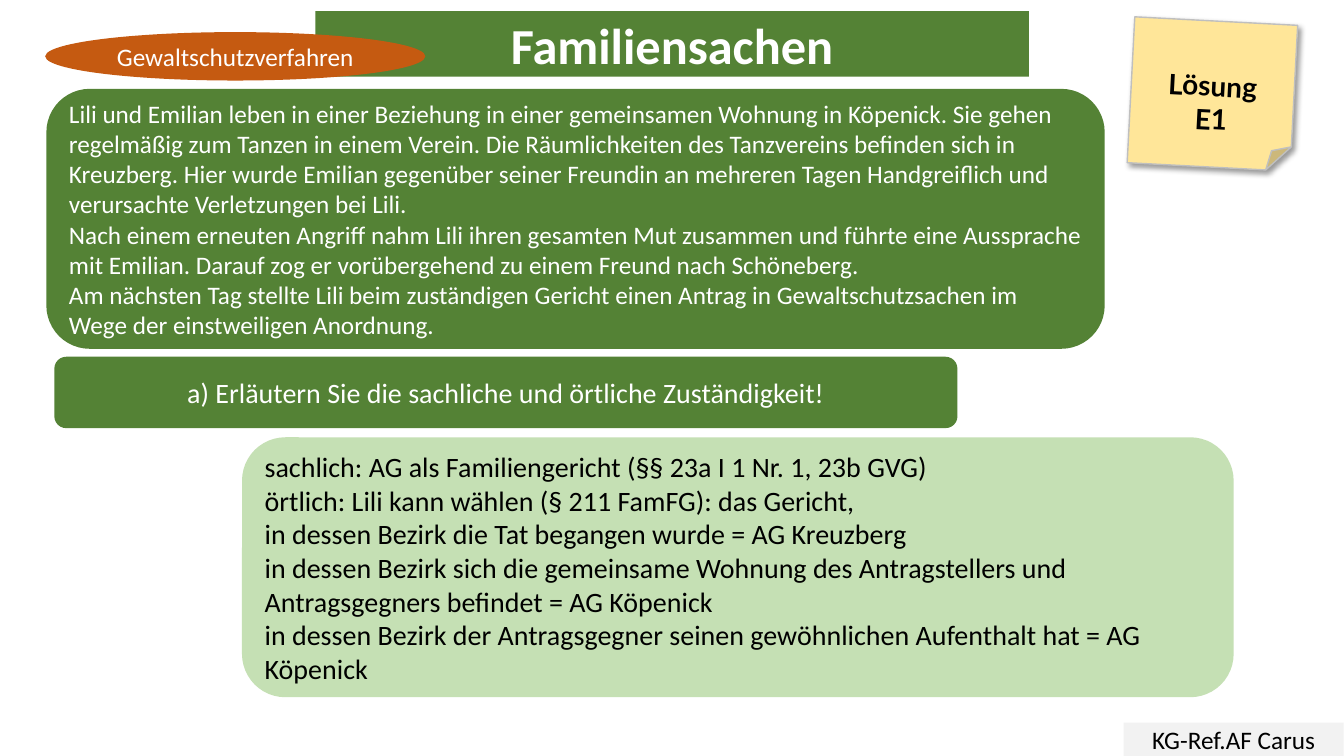
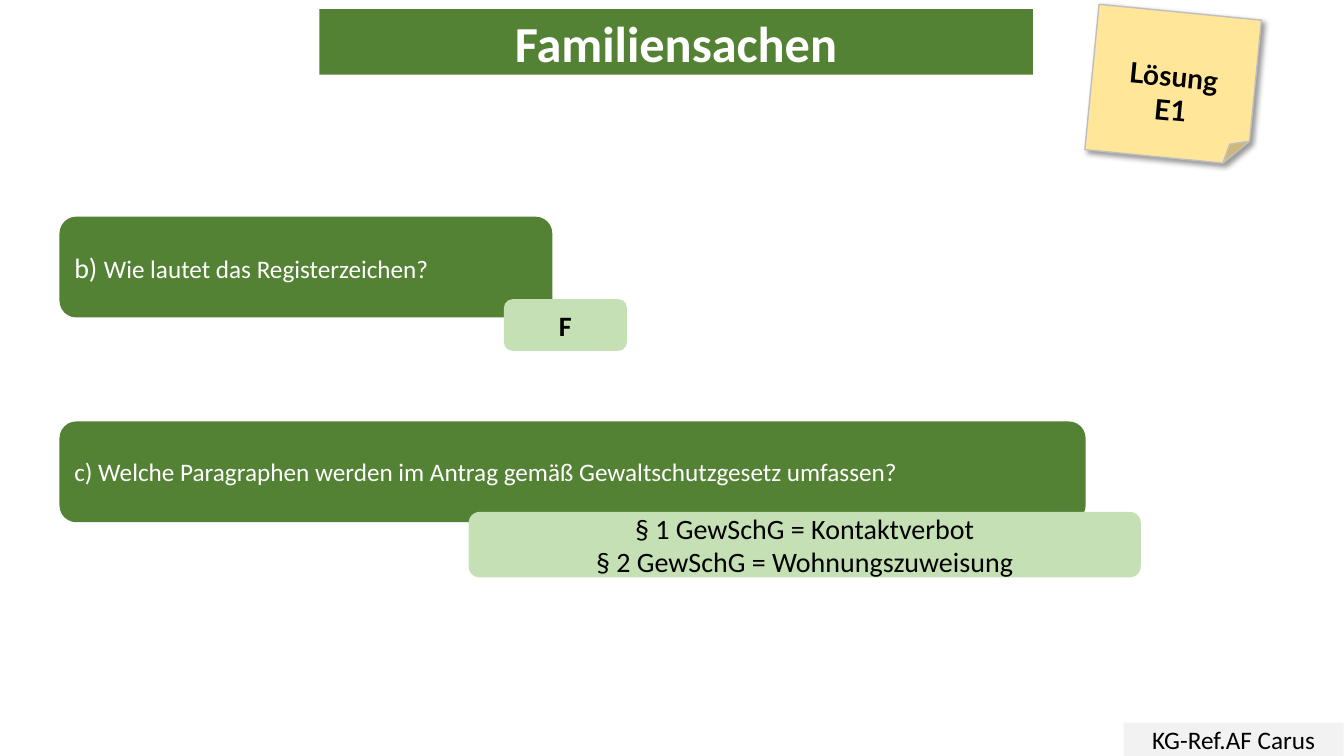
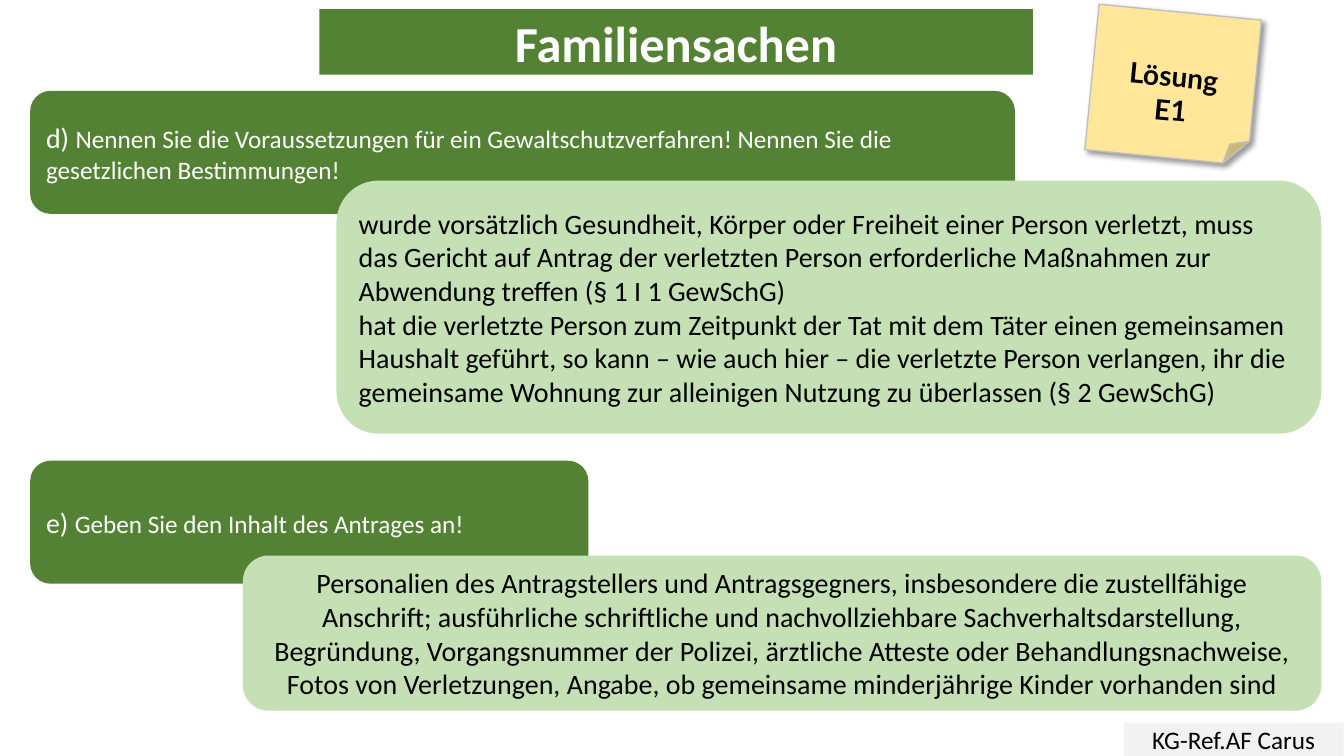
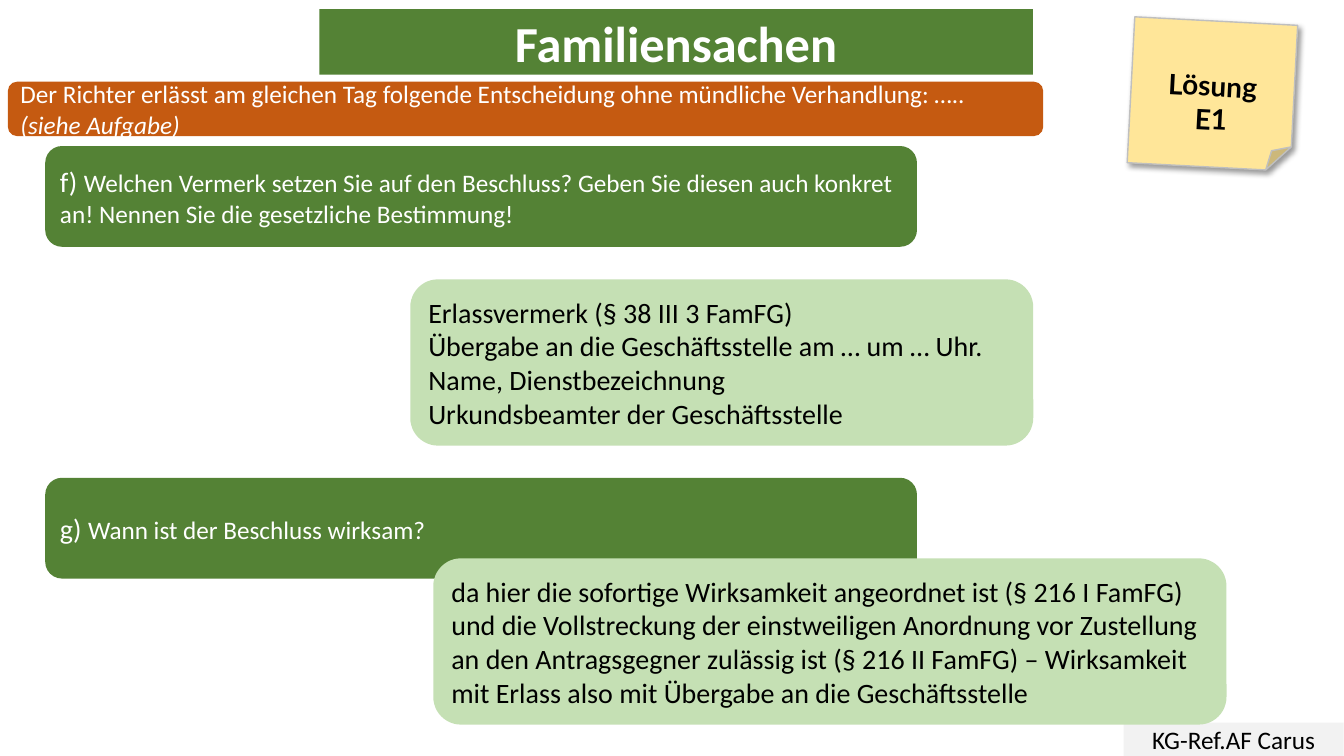
"""Builds four solution slides on a family law case in out.pptx."""
from dataclasses import dataclass

from lxml import etree
from pptx import Presentation
from pptx.dml.color import RGBColor
from pptx.enum.shapes import MSO_SHAPE
from pptx.enum.text import MSO_ANCHOR, MSO_AUTO_SIZE, PP_ALIGN
from pptx.oxml.ns import qn
from pptx.util import Cm, Pt

ROUNDED = MSO_SHAPE.ROUNDED_RECTANGLE
RECTANGLE = MSO_SHAPE.RECTANGLE
ELLIPSE = MSO_SHAPE.OVAL
NOTE = MSO_SHAPE.FOLDED_CORNER
LEFT = PP_ALIGN.LEFT
CENTER = PP_ALIGN.CENTER
MIDDLE = MSO_ANCHOR.MIDDLE
NO_AUTOFIT = MSO_AUTO_SIZE.NONE
TITLE_ONLY = 5


@dataclass(frozen=True)
class Theme:
    """Colours, fonts and type sizes."""
    dark_green: str = "548235"
    light_green: str = "C5E0B4"
    orange: str = "C55A11"
    yellow: str = "FFE699"
    pale_gray: str = "F2F2F2"
    gray: str = "BFBFBF"
    white: str = "FFFFFF"
    black: str = "000000"
    font: str = "Calibri"
    note_font: str = "Lato"
    title_size: int = 36
    large_size: int = 20
    small_size: int = 18


@dataclass(frozen=True)
class Style:
    """Look of a box; sizes has one entry for each run of a paragraph."""
    fill: str
    color: str
    sizes: tuple
    align: int = LEFT
    bold: bool = False
    italic_tail: bool = False
    font: str = Theme.font
    geometry: int = ROUNDED


theme = Theme()
large, small = theme.large_size, theme.small_size

title_style = Style(theme.dark_green, theme.white, (theme.title_size,), CENTER, bold=True)
footer_style = Style(theme.pale_gray, theme.black, (small,), CENTER, geometry=RECTANGLE)
note_style = Style(theme.yellow, theme.black, (large,), CENTER, bold=True,
                   font=theme.note_font, geometry=NOTE)
case_style = Style(theme.dark_green, theme.white, (small,))
question_style = Style(theme.dark_green, theme.white, (large, small))
centered_question_style = Style(theme.dark_green, theme.white, (large,), CENTER)
answer_style = Style(theme.light_green, theme.black, (large,))
centered_answer_style = Style(theme.light_green, theme.black, (large,), CENTER)
bold_answer_style = Style(theme.light_green, theme.black, (large,), CENTER, bold=True)
decision_style = Style(theme.orange, theme.white, (small, small), italic_tail=True)
topic_style = Style(theme.orange, theme.white, (small,), CENTER, geometry=ELLIPSE)

TITLE_SIZE = (17.98, 1.65)
NOTE_SIZE = (4.11, 3.68)
FOOTER_BOX = (28.32, 18.21, 5.54, 0.84)
STRAIGHT_NOTE = (28.5, 0.53, 3)
TILTED_NOTE = (27.51, 0.3, 5.6)
FIRST_TITLE = (7.95, 0.28)
NEXT_TITLE = (8.05, 0.23)


def format_box(shape, style, paragraphs):
    """Fill a shape and set its text, with | between runs."""
    shape.fill.solid()
    shape.fill.fore_color.rgb = RGBColor.from_string(style.fill)
    shape.line.fill.background()
    frame = shape.text_frame
    frame.word_wrap = True
    frame.auto_size = NO_AUTOFIT
    frame.vertical_anchor = MIDDLE
    for index, text in enumerate(paragraphs):
        paragraph = frame.add_paragraph() if index else frame.paragraphs[0]
        paragraph.alignment = style.align
        for position, (part, size) in enumerate(zip(text.split("|"), style.sizes)):
            run = paragraph.add_run()
            run.text = part
            run.font.name = style.font
            run.font.size = Pt(size)
            run.font.bold = style.bold
            run.font.italic = style.italic_tail and position > 0
            run.font.color.rgb = RGBColor.from_string(style.color)


def add_box(slide, style, box, paragraphs):
    """Add a shape without shadow, with its box given in centimetres."""
    shape = slide.shapes.add_shape(style.geometry, *(Cm(length) for length in box))
    shape.shadow.inherit = False
    format_box(shape, style, paragraphs)
    return shape


slides = [
    (FIRST_TITLE, STRAIGHT_NOTE, [
        (case_style, (1.17, 2.24, 26.67, 6.55), [
            "Lili und Emilian leben in einer Beziehung in einer gemeinsamen Wohnung in "
            "Köpenick. Sie gehen regelmäßig zum Tanzen in einem Verein. Die "
            "Räumlichkeiten des Tanzvereins befinden sich in Kreuzberg. Hier wurde "
            "Emilian gegenüber seiner Freundin an mehreren Tagen Handgreiflich und "
            "verursachte Verletzungen bei Lili.",
            "Nach einem erneuten Angriff nahm Lili ihren gesamten Mut zusammen und "
            "führte eine Aussprache mit Emilian. Darauf zog er vorübergehend zu einem "
            "Freund nach Schöneberg.",
            "Am nächsten Tag stellte Lili beim zuständigen Gericht einen Antrag in "
            "Gewaltschutzsachen im Wege der einstweiligen Anordnung.",
        ]),
        (centered_question_style, (1.37, 8.99, 22.76, 1.8), [
            "a) Erläutern Sie die sachliche und örtliche Zuständigkeit!",
        ]),
        (answer_style, (6.1, 11.02, 24.99, 6.55), [
            "sachlich: AG als Familiengericht (§§ 23a I 1 Nr. 1, 23b GVG)",
            "örtlich: Lili kann wählen (§ 211 FamFG): das Gericht,",
            "in dessen Bezirk die Tat begangen wurde = AG Kreuzberg",
            "in dessen Bezirk sich die gemeinsame Wohnung des Antragstellers und "
            "Antragsgegners befindet = AG Köpenick",
            "in dessen Bezirk der Antragsgegner seinen gewöhnlichen Aufenthalt hat = AG "
            "Köpenick",
        ]),
        (topic_style, (1.14, 0.81, 9.58, 1.22), ["Gewaltschutzverfahren"]),
    ]),
    (NEXT_TITLE, TILTED_NOTE, [
        (question_style, (1.5, 5.46, 12.42, 2.54), ["b) |Wie lautet das Registerzeichen?"]),
        (bold_answer_style, (12.7, 7.54, 3.1, 1.3), ["F"]),
        (case_style, (1.5, 10.62, 25.86, 2.54), [
            "c) Welche Paragraphen werden im Antrag gemäß Gewaltschutzgesetz umfassen?",
        ]),
        (centered_answer_style, (11.81, 12.9, 16.94, 1.65), [
            "§ 1 GewSchG = Kontaktverbot",
            "§ 2 GewSchG = Wohnungszuweisung",
        ]),
    ]),
    (NEXT_TITLE, TILTED_NOTE, [
        (question_style, (0.76, 2.29, 24.82, 3.1), [
            "d) |Nennen Sie die Voraussetzungen für ein Gewaltschutzverfahren! Nennen Sie "
            "die gesetzlichen Bestimmungen!",
        ]),
        (answer_style, (8.48, 4.55, 24.82, 6.38), [
            "wurde vorsätzlich Gesundheit, Körper oder Freiheit einer Person verletzt, "
            "muss das Gericht auf Antrag der verletzten Person erforderliche Maßnahmen "
            "zur Abwendung treffen (§ 1 I 1 GewSchG)",
            "hat die verletzte Person zum Zeitpunkt der Tat mit dem Täter einen "
            "gemeinsamen Haushalt geführt, so kann – wie auch hier – die verletzte "
            "Person verlangen, ihr die gemeinsame Wohnung zur alleinigen Nutzung zu "
            "überlassen (§ 2 GewSchG)",
        ]),
        (question_style, (0.76, 11.61, 14.07, 3.1), [
            "e) |Geben Sie den Inhalt des Antrages an!",
        ]),
        (centered_answer_style, (6.12, 14, 27.18, 3.91), [
            "Personalien des Antragstellers und Antragsgegners, insbesondere die "
            "zustellfähige Anschrift; ausführliche schriftliche und nachvollziehbare "
            "Sachverhaltsdarstellung, Begründung, Vorgangsnummer der Polizei, ärztliche "
            "Atteste oder Behandlungsnachweise, Fotos von Verletzungen, Angabe, ob "
            "gemeinsame minderjährige Kinder vorhanden sind",
        ]),
    ]),
    (NEXT_TITLE, STRAIGHT_NOTE, [
        (question_style, (1.14, 3.68, 21.97, 2.54), [
            "f) |Welchen Vermerk setzen Sie auf den Beschluss? Geben Sie diesen auch "
            "konkret an! Nennen Sie die gesetzliche Bestimmung!",
        ]),
        (answer_style, (10.34, 7.04, 15.7, 4.19), [
            "Erlassvermerk (§ 38 III 3 FamFG)",
            "Übergabe an die Geschäftsstelle am … um … Uhr.",
            "Name, Dienstbezeichnung",
            "Urkundsbeamter der Geschäftsstelle",
        ]),
        (decision_style, (0.2, 2.06, 26.09, 1.37), [
            "Der Richter erlässt am gleichen Tag folgende Entscheidung ohne mündliche "
            "Verhandlung: ….. |(siehe Aufgabe)",
        ]),
        (question_style, (1.14, 12.04, 21.97, 2.54), ["g) |Wann ist der Beschluss wirksam?"]),
        (answer_style, (10.92, 14.07, 19.99, 4.19), [
            "da hier die sofortige Wirksamkeit angeordnet ist (§ 216 I FamFG) und die "
            "Vollstreckung der einstweiligen Anordnung vor Zustellung an den "
            "Antragsgegner zulässig ist (§ 216 II FamFG) – Wirksamkeit mit Erlass also "
            "mit Übergabe an die Geschäftsstelle",
        ]),
    ]),
]

presentation = Presentation()
presentation.slide_width = Cm(33.87)
presentation.slide_height = Cm(19.05)

for title_position, (note_left, note_top, note_rotation), boxes in slides:
    slide = presentation.slides.add_slide(presentation.slide_layouts[TITLE_ONLY])

    title = slide.shapes.title
    title.left, title.top = (Cm(length) for length in title_position)
    title.width, title.height = (Cm(length) for length in TITLE_SIZE)
    geometry = etree.SubElement(title.element.spPr, qn("a:prstGeom"), prst="roundRect")
    etree.SubElement(geometry, qn("a:avLst"))
    format_box(title, title_style, ["Familiensachen"])

    add_box(slide, footer_style, FOOTER_BOX, ["KG-Ref.AF Carus"])

    note = add_box(slide, note_style, (note_left, note_top, *NOTE_SIZE), ["Lösung", "E1"])
    note.rotation = note_rotation
    note.text_frame.margin_top = Cm(1.14)
    note.line.color.rgb = RGBColor.from_string(theme.gray)
    note.line.width = Pt(1)
    effects = note.element.spPr.find(qn("a:effectLst"))
    shadow = etree.SubElement(effects, qn("a:outerShdw"), blurRad=str(Pt(4)), dist=str(Pt(3)),
                              dir="2700000", algn="tl", rotWithShape="0")
    shadow_color = etree.SubElement(shadow, qn("a:srgbClr"), val=theme.black)
    etree.SubElement(shadow_color, qn("a:alpha"), val="40000")

    for style, box, paragraphs in boxes:
        add_box(slide, style, box, paragraphs)

presentation.save("out.pptx")
